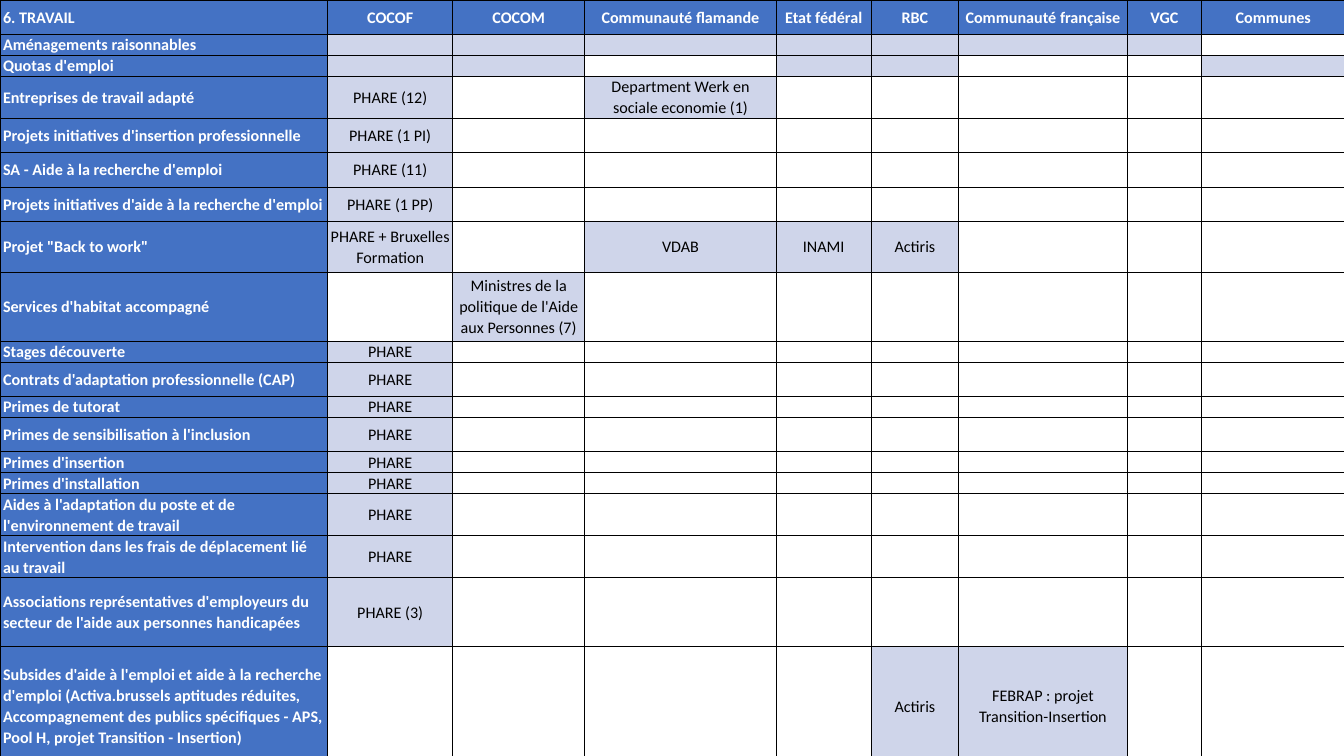
import lxml.etree
import pptx
import pptx.dml.color
import pptx.enum.text
import pptx.oxml.ns
import pptx.util

Inches = pptx.util.Inches
Pt = pptx.util.Pt
RGBColor = pptx.dml.color.RGBColor
qn = pptx.oxml.ns.qn

BLUE = RGBColor(0x44, 0x72, 0xC4)
PALE_BLUE = RGBColor(0xCF, 0xD5, 0xEA)
WHITE = RGBColor(0xFF, 0xFF, 0xFF)
BLACK = RGBColor(0x00, 0x00, 0x00)
FONT = "Calibri"
FONT_SIZE = Pt(11.5)
BORDER_WIDTH = Pt(0.5)

COLUMNS = [
    ("6. TRAVAIL", 3.25),
    ("COCOF", 1.24),
    ("COCOM", 1.31),
    ("Communauté flamande", 1.9),
    ("Etat fédéral", 0.94),
    ("RBC", 0.87),
    ("Communauté française", 1.67),
    ("VGC", 0.74),
    ("Communes", 1.42),
]
COCOF, COCOM, FLAMANDE, FEDERAL, RBC, FRANCAISE, VGC, COMMUNES = range(1, 9)
HEADER_HEIGHT = 0.34

# Label, row height, and the shaded cells with their text
MEASURES = [
    ("Aménagements raisonnables", 0.19, dict.fromkeys(range(COCOF, COMMUNES), "")),
    ("Quotas d'emploi", 0.19,
     dict.fromkeys([COCOF, COCOM, FEDERAL, RBC, COMMUNES], "")),
    ("Entreprises de travail adapté", 0.4,
     {COCOF: "PHARE (12)", FLAMANDE: "Department Werk en sociale economie (1)"}),
    ("Projets initiatives d'insertion professionnelle", 0.34, {COCOF: "PHARE (1 PI)"}),
    ("SA - Aide à la recherche d'emploi", 0.34, {COCOF: "PHARE (11)"}),
    ("Projets initiatives d'aide à la recherche d'emploi", 0.34,
     {COCOF: "PHARE (1 PP)"}),
    ('Projet "Back to work"', 0.51,
     {COCOF: "PHARE + Bruxelles Formation", FLAMANDE: "VDAB",
      FEDERAL: "INAMI", RBC: "Actiris"}),
    ("Services d'habitat accompagné", 0.68,
     {COCOM: "Ministres de la politique de l'Aide aux Personnes (7)"}),
    ("Stages découverte", 0.19, {COCOF: "PHARE"}),
    ("Contrats d'adaptation professionnelle (CAP)", 0.34, {COCOF: "PHARE"}),
    ("Primes de tutorat", 0.19, {COCOF: "PHARE"}),
    ("Primes de sensibilisation à l'inclusion", 0.34, {COCOF: "PHARE"}),
    ("Primes d'insertion", 0.19, {COCOF: "PHARE"}),
    ("Primes d'installation", 0.19, {COCOF: "PHARE"}),
    ("Aides à l'adaptation du poste et de l'environnement de travail", 0.4,
     {COCOF: "PHARE"}),
    ("Intervention dans les frais de déplacement lié au travail", 0.4,
     {COCOF: "PHARE"}),
    ("Associations représentatives d'employeurs du secteur de l'aide aux "
     "personnes handicapées", 0.68, {COCOF: "PHARE (3)"}),
    ("Subsides d'aide à l'emploi et aide à la recherche d'emploi "
     "(Activa.brussels aptitudes réduites, Accompagnement des publics "
     "spécifiques - APS, Pool H, projet Transition - Insertion)", 1.19,
     {RBC: "Actiris", FRANCAISE: "FEBRAP : projet Transition-Insertion"}),
]


def add_borders(cell):
    tc_pr = cell._tc.get_or_add_tcPr()
    for side in ("a:lnL", "a:lnR", "a:lnT", "a:lnB"):
        ln = lxml.etree.SubElement(tc_pr, qn(side), w=str(int(BORDER_WIDTH)))
        fill = lxml.etree.SubElement(ln, qn("a:solidFill"))
        lxml.etree.SubElement(fill, qn("a:srgbClr"), val=str(BLACK))


def format_cell(cell, text, fill, color, bold, centred):
    add_borders(cell)
    if fill is None:
        cell.fill.background()
    else:
        cell.fill.solid()
        cell.fill.fore_color.rgb = fill
    cell.margin_left = cell.margin_right = Inches(0.03)
    cell.margin_top = cell.margin_bottom = 0
    cell.vertical_anchor = pptx.enum.text.MSO_ANCHOR.MIDDLE
    p = cell.text_frame.paragraphs[0]
    p.line_spacing = 1.07
    if centred:
        p.alignment = pptx.enum.text.PP_ALIGN.CENTER
    if not text:
        # An empty paragraph takes its height from the end mark
        size = str(int(FONT_SIZE.pt * 100))
        lxml.etree.SubElement(p._p, qn("a:endParaRPr"), sz=size)
        return
    p.text = text
    font = p.runs[0].font
    font.name = FONT
    font.size = FONT_SIZE
    font.bold = bold
    font.color.rgb = color


def add_measures_table(slide, left, top, width):
    heights = [HEADER_HEIGHT] + [height for _, height, _ in MEASURES]
    table = slide.shapes.add_table(
        len(heights), len(COLUMNS), left, top, width, Inches(sum(heights))).table
    table.first_row = False
    table.horz_banding = False
    for column, (_, column_width) in zip(table.columns, COLUMNS):
        column.width = Inches(column_width)
    for row, height in zip(table.rows, heights):
        row.height = Inches(height)

    for col, (name, _) in enumerate(COLUMNS):
        format_cell(table.cell(0, col), name, BLUE, WHITE, True, col > 0)
    for row, (label, _, shaded) in enumerate(MEASURES, start=1):
        format_cell(table.cell(row, 0), label, BLUE, WHITE, True, False)
        for col in range(1, len(COLUMNS)):
            fill = PALE_BLUE if col in shaded else None
            format_cell(table.cell(row, col), shaded.get(col, ""),
                        fill, BLACK, False, True)


def main():
    prs = pptx.Presentation()
    prs.slide_width = Inches(13.33)
    prs.slide_height = Inches(7.5)
    slide = prs.slides.add_slide(prs.slide_layouts[6])
    add_measures_table(slide, 0, 0, prs.slide_width)
    prs.save("out.pptx")


if __name__ == "__main__":
    main()
